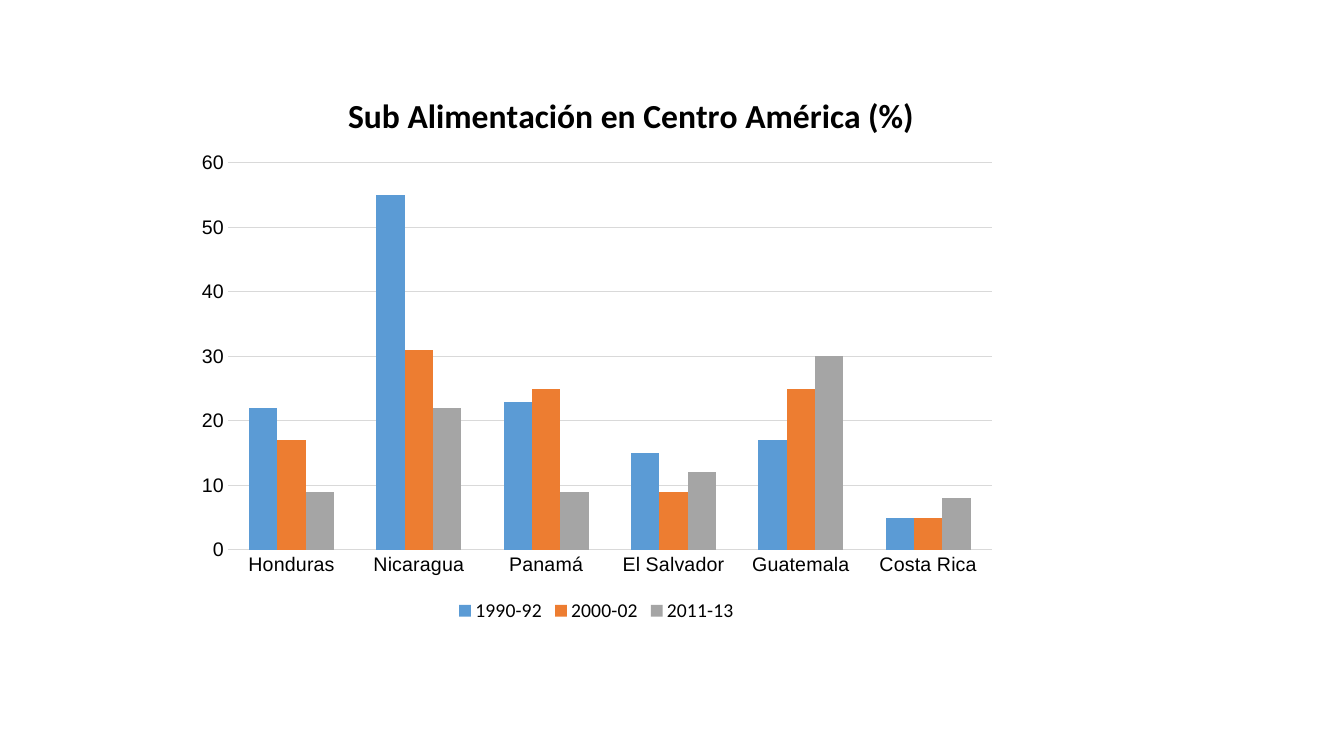
from dataclasses import dataclass

from pptx import Presentation
from pptx.chart.data import CategoryChartData
from pptx.dml.color import RGBColor
from pptx.enum.chart import XL_CHART_TYPE as ChartType
from pptx.enum.chart import XL_LEGEND_POSITION as LegendPos
from pptx.enum.chart import XL_TICK_MARK as TickMark
from pptx.oxml import parse_xml
from pptx.oxml.ns import nsdecls, qn
from pptx.util import Pt

EMU_PER_PX = 914400 / 100.8
SLIDE = (1344, 756)
CHART = (185, 74, 823, 553)
PLOT = (228, 163, 764, 387)
TITLE_AT = (342, 87)

TITLE = "Sub Alimentación en Centro América (%)"
COUNTRIES = ["Honduras", "Nicaragua", "Panamá", "El Salvador", "Guatemala", "Costa Rica"]
PERIODS = {
    "1990-92": (22, 55, 23, 15, 17, 5),
    "2000-02": (17, 31, 25, 9, 25, 5),
    "2011-13": (9, 22, 9, 12, 30, 8),
}


@dataclass(frozen=True)
class Theme:
    """Fonts, type sizes and colours of the slide."""
    heading_font: str = "Calibri"
    axis_font: str = "Arial"
    title_size: int = 24
    label_size: int = 14
    text: str = "000000"
    grid: str = "D9D9D9"
    series: tuple = ("5B9BD5", "ED7D31", "A5A5A5")


THEME = Theme()


def px(n):
    """Turn pixels into EMU."""
    return round(n * EMU_PER_PX)


def set_font(font, name, size, bold=False):
    """Format a font in the theme's text colour."""
    font.name, font.size, font.bold = name, Pt(size), bold
    font.color.rgb = RGBColor.from_string(THEME.text)


def set_layout(parent, index, x, y, size=None):
    """Place a chart part at slide pixels, as fractions of the chart frame."""
    left, top, width, height = CHART
    values = {"x": (x - left) / width, "y": (y - top) / height}
    target = ""
    if size:
        values.update(w=size[0] / width, h=size[1] / height)
        target = '<c:layoutTarget val="inner"/>'
    modes = '<c:xMode val="edge"/><c:yMode val="edge"/>'
    places = "".join(f'<c:{k} val="{v:.4f}"/>' for k, v in values.items())
    for old in parent.findall(qn("c:layout")):
        parent.remove(old)
    parent.insert(index, parse_xml(
        f'<c:layout {nsdecls("c")}><c:manualLayout>{target}{modes}{places}'
        "</c:manualLayout></c:layout>"))


def format_axis(axis):
    """Show only an axis's labels."""
    axis.major_tick_mark = axis.minor_tick_mark = TickMark.NONE
    axis.format.line.fill.background()
    set_font(axis.tick_labels.font, THEME.axis_font, THEME.label_size)


def format_value_axis(axis):
    """Set the value scale and its gridlines."""
    format_axis(axis)
    axis.minimum_scale, axis.maximum_scale, axis.major_unit = 0, 60, 10
    axis.has_major_gridlines = True
    line = axis.major_gridlines.format.line
    line.width = Pt(0.75)
    line.color.rgb = RGBColor.from_string(THEME.grid)


def add_chart_title(chart, text):
    """Add the bold chart heading."""
    chart.has_title = True
    title = chart.chart_title
    r = title.text_frame.paragraphs[0].add_run()
    r.text = text
    set_font(r.font, THEME.heading_font, THEME.title_size, bold=True)
    title.include_in_layout = False
    set_layout(title.element, 1, *TITLE_AT)


def add_legend(chart):
    """Add the legend below the plot."""
    chart.has_legend = True
    chart.legend.position = LegendPos.BOTTOM
    chart.legend.include_in_layout = False
    set_font(chart.legend.font, THEME.heading_font, THEME.label_size)


def add_column_chart(s):
    """Add the clustered columns by country and period."""
    data = CategoryChartData()
    data.categories = COUNTRIES
    for period, values in PERIODS.items():
        data.add_series(period, values)
    chart = s.shapes.add_chart(
        ChartType.COLUMN_CLUSTERED, *map(px, CHART), data).chart
    set_font(chart.font, THEME.heading_font, 10)
    plot = chart.plots[0]
    plot.gap_width, plot.overlap, plot.vary_by_categories = 150, 0, False
    for series, color in zip(plot.series, THEME.series):
        series.format.fill.solid()
        series.format.fill.fore_color.rgb = RGBColor.from_string(color)
    format_axis(chart.category_axis)
    format_value_axis(chart.value_axis)
    add_chart_title(chart, TITLE)
    add_legend(chart)
    set_layout(chart.element.find(".//" + qn("c:plotArea")), 0, *PLOT[:2], PLOT[2:])


def main():
    """Build and save the slide."""
    prs = Presentation()
    prs.slide_width, prs.slide_height = map(px, SLIDE)
    s = prs.slides.add_slide(prs.slide_layouts[6])
    add_column_chart(s)
    prs.save("out.pptx")


if __name__ == "__main__":
    main()
